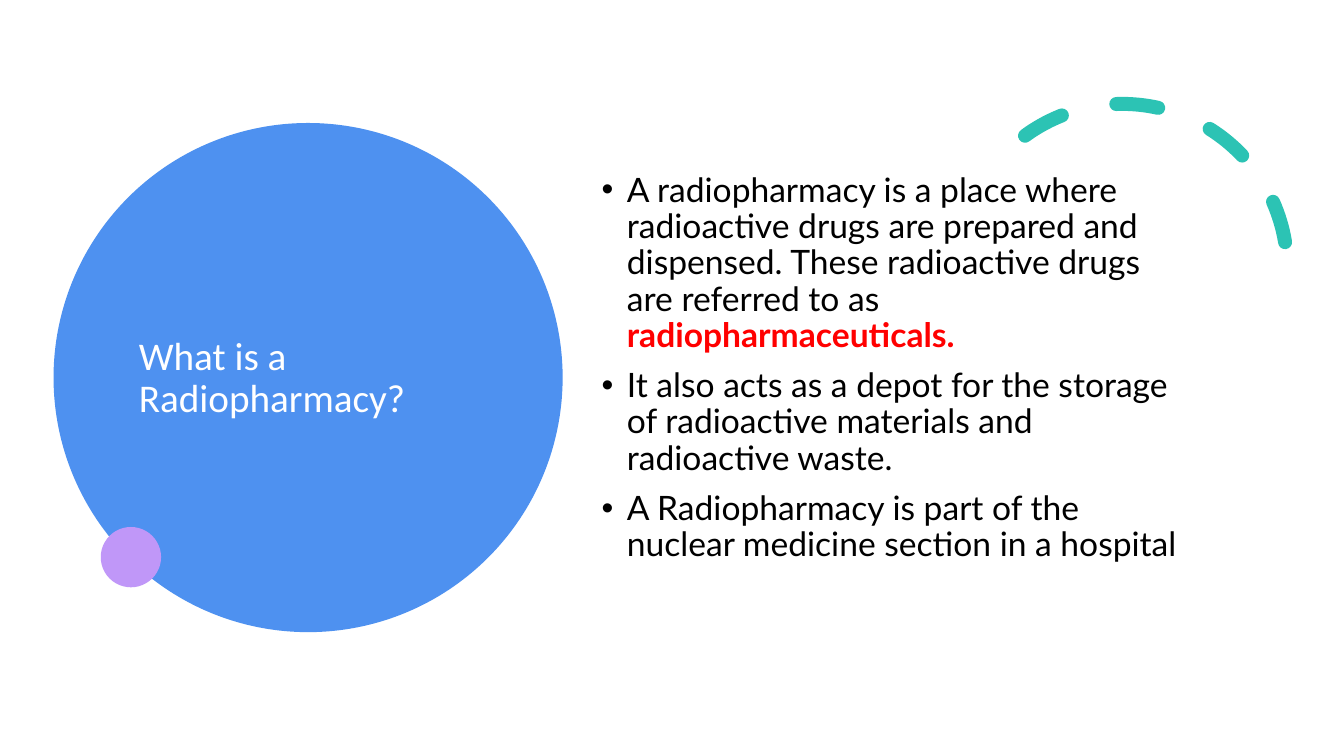
from lxml.etree import SubElement
from pptx import Presentation
from pptx.dml.color import RGBColor
from pptx.enum.dml import MSO_LINE
from pptx.enum.shapes import MSO_SHAPE as Shape
from pptx.enum.text import MSO_ANCHOR as Anchor
from pptx.oxml.ns import qn
from pptx.util import Cm, Pt

WHITE = RGBColor(0xFF, 0xFF, 0xFF)
BLACK = RGBColor(0x00, 0x00, 0x00)
RED = RGBColor(0xFF, 0x00, 0x00)
BLUE = RGBColor(0x4E, 0x91, 0xF0)
PURPLE = RGBColor(0xC0, 0x97, 0xF8)
TEAL = RGBColor(0x2C, 0xC3, 0xB4)

POINTS = [
    ("A radiopharmacy is a place where radioactive drugs are prepared and "
     "dispensed. These radioactive drugs are referred to as ",
     "radiopharmaceuticals."),
    ("It also acts as a depot for the storage of radioactive materials and "
     "radioactive waste.", ""),
    ("A Radiopharmacy is part of the nuclear medicine section in a hospital", ""),
]


def add_circle(left, top, diameter, color):
    circle = page.shapes.add_shape(
        Shape.OVAL, Cm(left), Cm(top), Cm(diameter), Cm(diameter))
    circle.shadow.inherit = False
    circle.fill.solid()
    circle.fill.fore_color.rgb = color
    circle.line.fill.background()


deck = Presentation()
deck.slide_width, deck.slide_height = Cm(33.87), Cm(19.05)
page = deck.slides.add_slide(deck.slide_layouts[6])
page.background.fill.solid()
page.background.fill.fore_color.rgb = WHITE

# Title on its large circle
add_circle(1.35, 3.1, 12.83, BLUE)
title = page.shapes.add_textbox(Cm(3.25), Cm(3.89), Cm(8.99), Cm(11.3))
title.text_frame.word_wrap = True
title.text_frame.vertical_anchor = Anchor.MIDDLE
title.text_frame.text = "What is a Radiopharmacy?"
heading = title.text_frame.paragraphs[0]
heading.line_spacing = 0.9
heading.font.name = "Calibri"
heading.font.size = Pt(28)
heading.font.color.rgb = WHITE

# Bulleted points
body = page.shapes.add_textbox(Cm(14.91), Cm(4.24), Cm(15.37), Cm(10.92))
frame = body.text_frame
frame.word_wrap = True
for index, (text, emphasis) in enumerate(POINTS):
    para = frame.add_paragraph() if index else frame.paragraphs[0]
    para.text = text
    props = para._p.get_or_add_pPr()
    props.set("marL", str(Cm(0.64)))
    props.set("indent", str(-Cm(0.64)))
    SubElement(props, qn("a:buFont")).set("typeface", "Arial")
    SubElement(props, qn("a:buChar")).set("char", "•")
    para.line_spacing = 0.9
    para.space_before = Pt(10 if index else 0)
    para.font.name = "Lato"
    para.font.size = Pt(24)
    para.font.color.rgb = BLACK
    if emphasis:
        span = para.add_run()
        span.text = emphasis
        span.font.bold = True
        span.font.color.rgb = RED
    for span in para.runs:
        span.font.name = "Lato"
        span.font.size = Pt(24)

# Dashed arc and small accent circle
arc = page.shapes.add_shape(Shape.ARC, Cm(24.13), Cm(2.62), Cm(8.31), Cm(8.31))
arc.shadow.inherit = False
arc.rotation = 330.2
arc.adjustments[0] = 158.17
arc.adjustments[1] = 17.81
arc.fill.background()
arc.line.color.rgb = TEAL
arc.line.width = Pt(10)
arc.line.dash_style = MSO_LINE.DASH
arc.element.spPr.find(qn("a:ln")).set("cap", "rnd")
add_circle(2.54, 13.28, 1.52, PURPLE)

deck.save("out.pptx")
